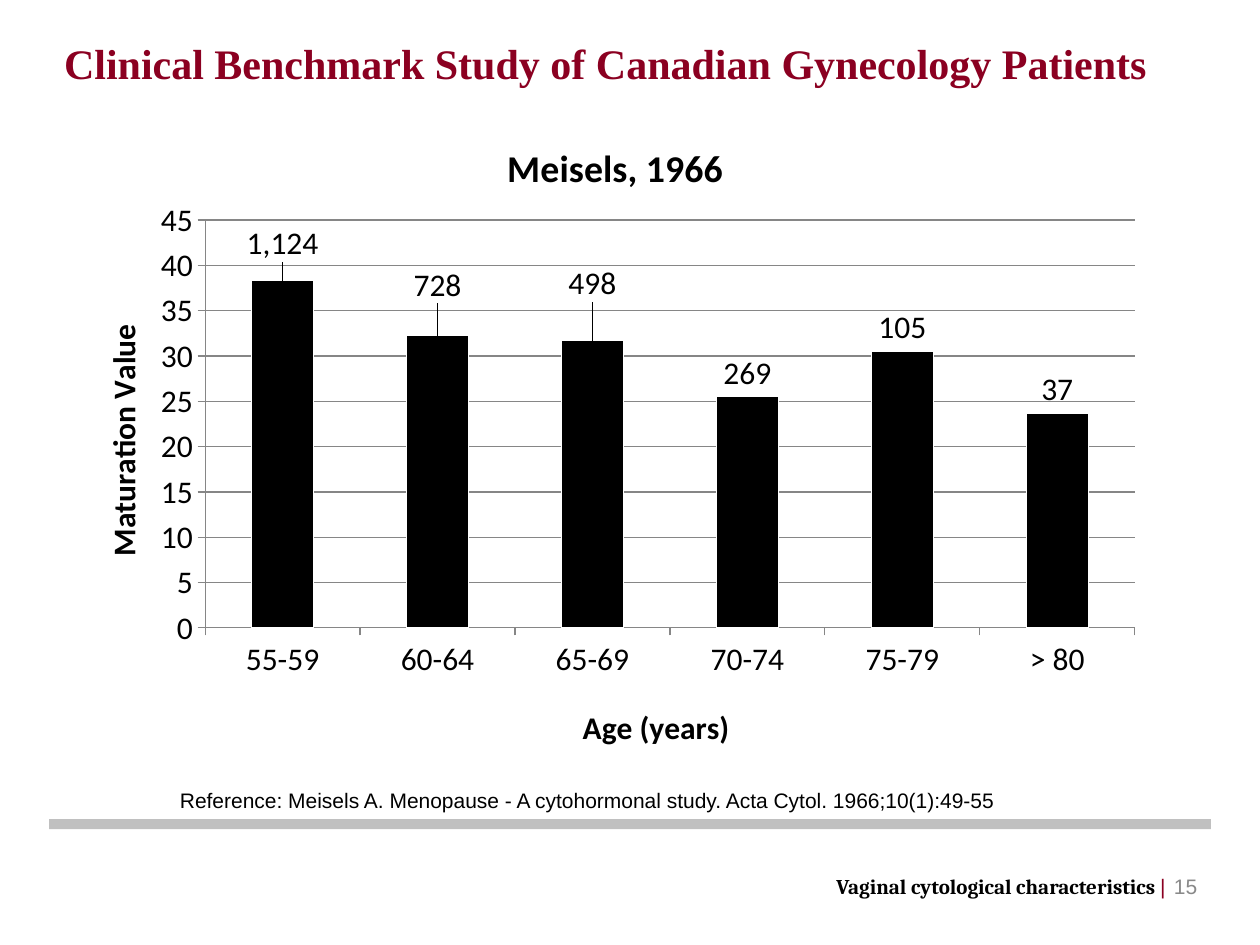
"""Build a slide with a column chart of maturation value by age."""
import pptx
import pptx.chart.data
import pptx.dml.color
import pptx.enum.chart
import pptx.enum.shapes
import pptx.enum.text
import pptx.oxml
import pptx.oxml.ns
import pptx.util

Inches = pptx.util.Inches
Pt = pptx.util.Pt
Align = pptx.enum.text.PP_ALIGN
qn = pptx.oxml.ns.qn

MAROON = "8B0021"
BLACK = "000000"
GREY = "868686"
AGES = ["55-59", "60-64", "65-69", "70-74", "75-79", "> 80"]
VALUES = [38.3, 32.3, 31.7, 25.5, 30.5, 23.7]
COUNTS = ["1,124", "728", "498", "269", "105", "37"]
SHIFTS = [-0.02, -0.04, -0.05, 0, 0, 0]


def color(text):
    """Turn a hex string into a colour."""
    return pptx.dml.color.RGBColor.from_string(text)


def style(font, size, name, tint, bold=False):
    """Set the main properties of a font."""
    font.size, font.name, font.bold = Pt(size), name, bold
    font.color.rgb = color(tint)


def write(slide, box, runs, align=Align.LEFT, anchor=pptx.enum.text.MSO_ANCHOR.TOP):
    """Add a one-paragraph text box; each run is its text and font settings."""
    frame = slide.shapes.add_textbox(*map(Inches, box)).text_frame
    frame.word_wrap = True
    frame.vertical_anchor = anchor
    line = frame.paragraphs[0]
    line.alignment = align
    for text, *look in runs:
        run = line.add_run()
        run.text = text
        style(run.font, *look)
    return line


def place(node, index, **parts):
    """Give a chart element a manual layout as its child at the index."""
    old = node.find(qn("c:layout"))
    if old is not None:
        node.remove(old)
    tags = "".join(f'<c:{key} val="{value}"/>' for key, value in parts.items())
    space = pptx.oxml.ns.nsdecls("c")
    node.insert(index, pptx.oxml.parse_xml(
        f"<c:layout {space}><c:manualLayout>{tags}</c:manualLayout></c:layout>"))


def label(title, text, size, x, y):
    """Fill and position a chart or axis title."""
    title.text_frame.text = text
    style(title.text_frame.paragraphs[0].runs[0].font, size, "Calibri", BLACK, True)
    place(title._element, 1, xMode="edge", yMode="edge", x=x, y=y)


def header(slide, box):
    """Add the slide heading."""
    line = write(slide, box, [("Clinical Benchmark Study of Canadian Gynecology Patients",
                               24, "Times New Roman", MAROON, True)])
    props = line._p.get_or_add_pPr()
    props.set("marL", str(Inches(0.38)))
    props.set("indent", str(-Inches(0.38)))


def columns(slide, box):
    """Add the column chart with patient counts over the columns."""
    data = pptx.chart.data.CategoryChartData(number_format="General")
    data.categories = AGES
    data.add_series("Series 1", VALUES)
    kind = pptx.enum.chart.XL_CHART_TYPE.COLUMN_CLUSTERED
    chart = slide.shapes.add_chart(kind, *map(Inches, box), data).chart
    style(chart.font, 18, "Calibri", BLACK)
    chart.has_legend = False
    label(chart.chart_title, "Meisels, 1966", 21.6, 0.4, 0.04)
    label(chart.category_axis.axis_title, "Age (years)", 18, 0.47, 0.9)
    label(chart.value_axis.axis_title, "Maturation Value", 18, 0.03, 0.32)
    for axis in (chart.category_axis, chart.value_axis):
        axis.format.line.color.rgb = color(GREY)
    scale = chart.value_axis
    scale.minimum_scale, scale.maximum_scale, scale.major_unit = 0, 45, 5
    scale.major_gridlines.format.line.color.rgb = color(GREY)
    place(chart._chartSpace.chart.plotArea, 0, layoutTarget="inner",
          xMode="edge", yMode="edge", x=0.13, y=0.17, w=0.85, h=0.62)
    plot = chart.plots[0]
    plot.gap_width = 150
    plot.vary_by_categories = False
    bars = plot.series[0]
    bars.format.fill.solid()
    bars.format.fill.fore_color.rgb = color(BLACK)
    bars.format.line.color.rgb = color("FFFFFF")
    bars.data_labels.show_value = True
    for i, count in enumerate(COUNTS):
        tag = bars.points[i].data_label
        tag.text_frame.text = count
        style(tag.text_frame.paragraphs[0].runs[0].font, 18, "Calibri", BLACK)
        tag.position = pptx.enum.chart.XL_LABEL_POSITION.OUTSIDE_END
    for node, shift in zip(bars._element.iter(qn("c:dLbl")), SHIFTS):
        if shift:
            place(node, 1, x=0, y=shift)


def source(slide, box):
    """Add the reference line."""
    text = ("Reference: Meisels A. Menopause - A cytohormonal study. "
            "Acta Cytol. 1966;10(1):49-55")
    write(slide, box, [(text, 12, "Arial", BLACK)])


def footer(slide, box):
    """Add the rule, the running title and the page number."""
    left, top, width, height = box
    rule = slide.shapes.add_shape(pptx.enum.shapes.MSO_SHAPE.RECTANGLE,
                                  *map(Inches, (left, top, width, 0.08)))
    rule.shadow.inherit = False
    rule.fill.solid()
    rule.fill.fore_color.rgb = color("C0C0C0")
    rule.line.fill.background()
    right, low, tall = left + width, top + 0.33, height - 0.33
    middle = pptx.enum.text.MSO_ANCHOR.MIDDLE
    write(slide, (right - 0.43, low, 0.42, tall),
          [("15", 12, "Arial", "898989")], Align.RIGHT, middle)
    write(slide, (right - 3.43, low, 3.17, tall),
          [("Vaginal cytological characteristics ", 12, "Cambria", BLACK, True),
           ("|", 12, "Arial", MAROON)], Align.RIGHT, middle)


def main():
    """Assemble and save the slide."""
    deck = pptx.Presentation()
    deck.slide_width, deck.slide_height = Inches(10), Inches(7.5)
    slide = deck.slides.add_slide(deck.slide_layouts[6])
    footer(slide, (0.39, 6.5, 9.22, 0.73))
    header(slide, (0.41, 0.25, 9.29, 0.61))
    columns(slide, (0.5, 0.86, 8.68, 5.22))
    source(slide, (1.33, 6.2, 7.67, 0.3))
    deck.save("out.pptx")


if __name__ == "__main__":
    main()
